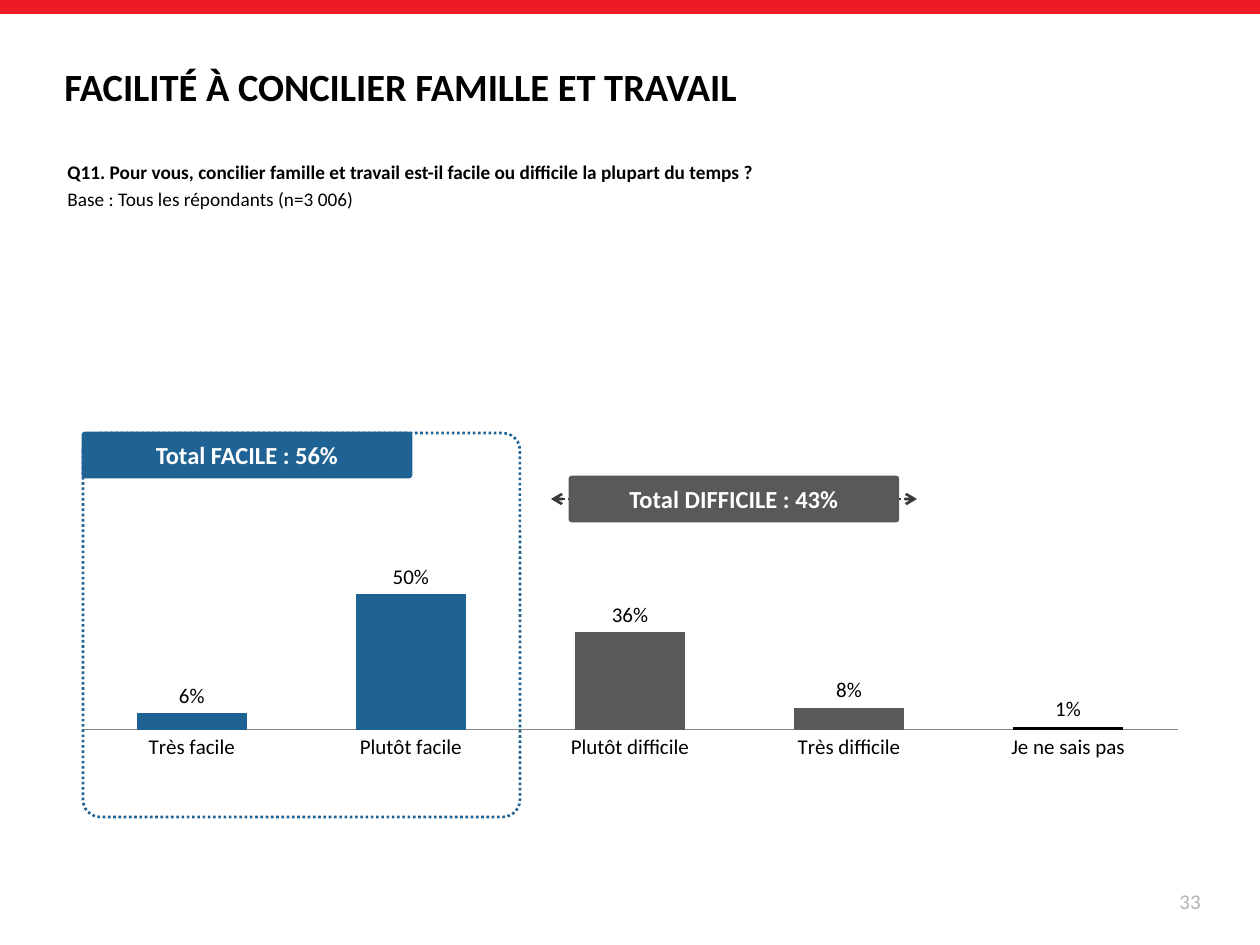
import lxml.etree
import pptx
import pptx.chart.data
import pptx.dml.color
import pptx.enum.chart
import pptx.enum.dml
import pptx.enum.shapes
import pptx.enum.text
import pptx.oxml
import pptx.oxml.ns
import pptx.util

RGBColor = pptx.dml.color.RGBColor
RED = RGBColor(0xED, 0x1C, 0x24)
BLUE = RGBColor(0x1F, 0x63, 0x94)
GRAY = RGBColor(0x59, 0x59, 0x59)
ARROW_GRAY = RGBColor(0x3A, 0x3A, 0x3A)
AXIS_GRAY = RGBColor(0x86, 0x86, 0x86)
PAGE_GRAY = RGBColor(0xB3, 0xB3, 0xB3)
BLACK = RGBColor(0x00, 0x00, 0x00)
WHITE = RGBColor(0xFF, 0xFF, 0xFF)

FONT = "Calibri"
PX_PER_INCH = 126
ALIGN = pptx.enum.text.PP_ALIGN
ANCHOR = pptx.enum.text.MSO_ANCHOR
SHAPE = pptx.enum.shapes.MSO_SHAPE
DOTTED = pptx.enum.dml.MSO_LINE.ROUND_DOT

RESPONSES = [
    ("Très facile", 0.06, BLUE),
    ("Plutôt facile", 0.50, BLUE),
    ("Plutôt difficile", 0.36, GRAY),
    ("Très difficile", 0.08, GRAY),
    ("Je ne sais pas", 0.01, BLACK),
]
PLOT_LAYOUT = {"x": 0.017, "y": 0.371, "w": 0.966, "h": 0.44}


def px(*lengths):
    """Turn pixel lengths into a list of EMU lengths."""
    return [pptx.util.Inches(length / PX_PER_INCH) for length in lengths]


def style_font(font, size, color, bold=False):
    """Apply the slide's typeface with a size, colour and weight."""
    font.name = FONT
    font.size = pptx.util.Pt(size)
    font.color.rgb = color
    font.bold = bold


def style_line(line, color):
    """Give an outline its colour and the common width."""
    line.color.rgb = color
    line.width = pptx.util.Pt(1.5)


def add_text(slide, box, lines, size, color, align, anchor=ANCHOR.MIDDLE):
    """Add a text box of (text, bold) lines."""
    text_frame = slide.shapes.add_textbox(*px(*box)).text_frame
    text_frame.word_wrap = True
    text_frame.vertical_anchor = anchor
    text_frame.text = "\n".join(text for text, bold in lines)
    for index, (paragraph, (text, bold)) in enumerate(zip(text_frame.paragraphs, lines)):
        paragraph.alignment = align
        if index:
            paragraph.space_before = pptx.util.Pt(size * 0.2)
        style_font(paragraph.runs[0].font, size, color, bold)


def add_top_band(slide, box):
    """Add the red band along the top edge."""
    band = slide.shapes.add_shape(SHAPE.RECTANGLE, *px(*box))
    band.shadow.inherit = False
    band.fill.solid()
    band.fill.fore_color.rgb = RED
    band.line.fill.background()


def set_plot_layout(chart):
    """Fix the inner plot area inside the chart frame."""
    plot_area = chart._chartSpace.chart.plotArea
    for layout in plot_area.findall(pptx.oxml.ns.qn("c:layout")):
        plot_area.remove(layout)
    modes = "".join(f'<c:{axis}Mode val="edge"/>' for axis in "xy")
    values = "".join(f'<c:{key} val="{value}"/>' for key, value in PLOT_LAYOUT.items())
    plot_area.insert(0, pptx.oxml.parse_xml(
        f'<c:layout {pptx.oxml.ns.nsdecls("c")}><c:manualLayout>'
        f'<c:layoutTarget val="inner"/>{modes}{values}</c:manualLayout></c:layout>'))


def add_response_chart(slide, box):
    """Add the column chart of responses."""
    chart_data = pptx.chart.data.CategoryChartData(number_format="0%")
    chart_data.categories = [label for label, value, color in RESPONSES]
    chart_data.add_series("Series 1", [value for label, value, color in RESPONSES])
    chart = slide.shapes.add_chart(
        pptx.enum.chart.XL_CHART_TYPE.COLUMN_CLUSTERED, *px(*box), chart_data).chart
    chart.has_title = False
    chart.has_legend = False
    style_font(chart.font, 12, BLACK)
    set_plot_layout(chart)

    value_axis = chart.value_axis
    value_axis.minimum_scale, value_axis.maximum_scale = 0, 1
    value_axis.has_major_gridlines = False
    value_axis.visible = False
    category_axis = chart.category_axis
    category_axis.major_tick_mark = pptx.enum.chart.XL_TICK_MARK.NONE
    category_axis.format.line.color.rgb = AXIS_GRAY

    plot = chart.plots[0]
    plot.gap_width = 100
    plot.vary_by_categories = False
    plot.has_data_labels = True
    labels = plot.data_labels
    labels.show_value = True
    labels.number_format = "0%"
    labels.number_format_is_linked = False
    labels.position = pptx.enum.chart.XL_LABEL_POSITION.OUTSIDE_END
    style_font(labels.font, 12, BLACK)
    for index, (label, value, color) in enumerate(RESPONSES):
        fill = plot.series[0].points[index].format.fill
        fill.solid()
        fill.fore_color.rgb = color


def add_rounded(shapes, box, color):
    """Add an outlined rectangle with slightly rounded corners."""
    shape = shapes.add_shape(SHAPE.ROUNDED_RECTANGLE, *px(*box))
    shape.adjustments[0] = 0.045
    shape.shadow.inherit = False
    style_line(shape.line, color)
    return shape


def add_total_label(shapes, box, text, color):
    """Add a filled label that states a total."""
    label = add_rounded(shapes, box, color)
    label.fill.solid()
    label.fill.fore_color.rgb = color
    text_frame = label.text_frame
    text_frame.vertical_anchor = ANCHOR.MIDDLE
    text_frame.text = text
    paragraph = text_frame.paragraphs[0]
    paragraph.alignment = ALIGN.CENTER
    style_font(paragraph.runs[0].font, 14, WHITE, True)


def add_easy_total(slide, box):
    """Add the dotted frame with its total in the top left corner."""
    left, top, width, height = box
    shapes = slide.shapes.add_group_shape().shapes
    frame = add_rounded(shapes, box, BLUE)
    frame.fill.background()
    frame.line.dash_style = DOTTED
    add_total_label(shapes, (left, top, 328, 44), "Total FACILE : 56%", BLUE)


def add_hard_total(slide, box):
    """Add the total centred over a dotted double arrow."""
    left, top, width, height = box
    shapes = slide.shapes.add_group_shape().shapes
    middle = top + height / 2
    arrow = shapes.add_connector(
        pptx.enum.shapes.MSO_CONNECTOR.STRAIGHT, *px(left, middle, left + width, middle))
    style_line(arrow.line, ARROW_GRAY)
    arrow.line.dash_style = DOTTED
    line_element = arrow.line._get_or_add_ln()
    for end in ("a:headEnd", "a:tailEnd"):
        lxml.etree.SubElement(line_element, pptx.oxml.ns.qn(end), type="arrow")
    lxml.etree.SubElement(arrow._element.spPr, pptx.oxml.ns.qn("a:effectLst"))
    label_box = (left + (width - 328) / 2, top, 328, height)
    add_total_label(shapes, label_box, "Total DIFFICILE : 43%", GRAY)


def main():
    """Build and save the slide."""
    presentation = pptx.Presentation()
    presentation.slide_width, presentation.slide_height = px(1260, 945)
    slide = presentation.slides.add_slide(presentation.slide_layouts[6])
    add_top_band(slide, (0, 0, 1260, 14))
    add_text(slide, (919, 876, 294, 50), [("33", False)], 12, PAGE_GRAY, ALIGN.RIGHT)
    question = [
        ("Q11. Pour vous, concilier famille et travail est-il facile ou difficile"
         " la plupart du temps ?", True),
        ("Base : Tous les répondants (n=3 006)", False),
    ]
    add_text(slide, (55, 154, 1013, 149), question, 11, BLACK, ALIGN.JUSTIFY, ANCHOR.TOP)
    title = [("FACILITÉ À CONCILIER FAMILLE ET TRAVAIL", True)]
    add_text(slide, (52, 53, 965, 66), title, 22, BLACK, ALIGN.LEFT)
    add_response_chart(slide, (63, 231, 1134, 615))
    add_easy_total(slide, (83, 433, 437, 384))
    add_hard_total(slide, (551, 477, 366, 44))
    presentation.save("out.pptx")


if __name__ == "__main__":
    main()
